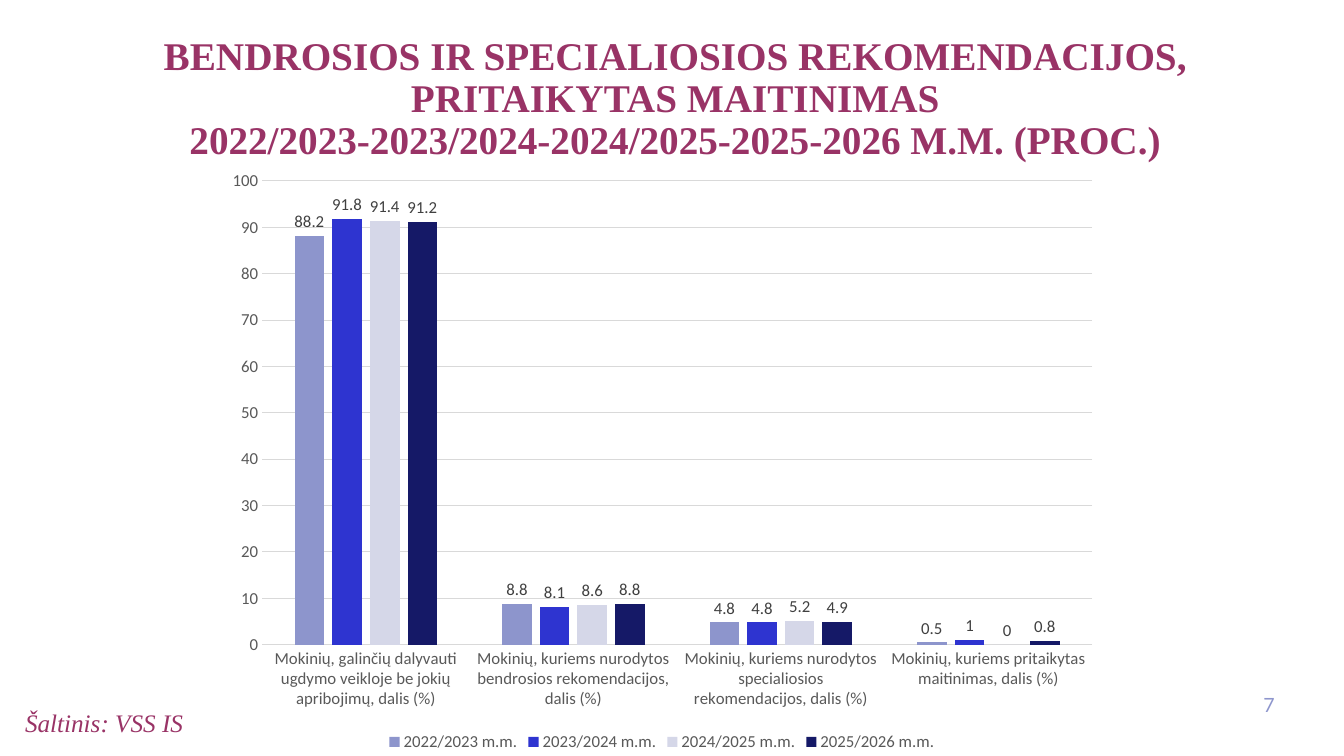
from dataclasses import dataclass

from lxml import etree
from pptx import Presentation
from pptx.chart.data import CategoryChartData
from pptx.dml.color import RGBColor
from pptx.enum import chart as charts, text
from pptx.oxml import ns
from pptx.util import Inches, Pt


@dataclass(frozen=True)
class Theme:
    serif: str = "Times New Roman"
    number_font: str = "Lato"
    chart_font: str = "Calibri"
    accent: str = "993366"
    number: str = "8E96CD"
    axis_text: str = "595959"
    label_text: str = "404040"
    grid: str = "D9D9D9"
    years: tuple = ("8D95CC", "2E34D0", "D5D7E8", "151967")
    title_size: int = 28
    source_size: int = 18
    number_size: int = 14
    chart_size: int = 12


THEME = Theme()

TITLE = (
    "BENDROSIOS IR SPECIALIOSIOS REKOMENDACIJOS,\v"
    "PRITAIKYTAS MAITINIMAS\v"
    "2022/2023-2023/2024-2024/2025-2025-2026 M.M. (PROC.)"
)
CATEGORIES = (
    "Mokinių, galinčių dalyvauti ugdymo veikloje be jokių apribojimų, dalis (%)",
    "Mokinių, kuriems nurodytos bendrosios rekomendacijos, dalis (%)",
    "Mokinių, kuriems nurodytos specialiosios rekomendacijos, dalis (%)",
    "Mokinių, kuriems pritaikytas maitinimas, dalis (%)",
)
SHARES = {
    "2022/2023 m.m.": (88.2, 8.8, 4.8, 0.5),
    "2023/2024 m.m.": (91.8, 8.1, 4.8, 1),
    "2024/2025 m.m.": (91.4, 8.6, 5.2, 0),
    "2025/2026 m.m.": (91.2, 8.8, 4.9, 0.8),
}
PLOT_AREA = {"x": 0.054, "y": 0.038, "w": 0.926, "h": 0.776}


def set_font(font, name, size, color, bold=False, italic=False):
    font.name = name
    font.size = Pt(size)
    font.bold = bold
    font.italic = italic
    font.color.rgb = RGBColor.from_string(color)


def set_line(line, color):
    line.color.rgb = RGBColor.from_string(color)
    line.width = Pt(0.75)


def place(shape, left, top, width, height):
    shape.left, shape.top = Inches(left), Inches(top)
    shape.width, shape.height = Inches(width), Inches(height)


def add_title(slide):
    title = slide.shapes.title
    place(title, 0.15, 0.31, 13.09, 1.56)
    frame = title.text_frame
    frame.text = TITLE
    frame.word_wrap = True
    frame.auto_size = text.MSO_AUTO_SIZE.NONE
    frame.vertical_anchor = text.MSO_ANCHOR.TOP
    paragraph = frame.paragraphs[0]
    paragraph.alignment = text.PP_ALIGN.CENTER
    paragraph.line_spacing = 0.9
    paragraph.space_before = Pt(0)
    set_font(paragraph.font, THEME.serif, THEME.title_size, THEME.accent, bold=True)


def add_text(slide, box, wording, alignment, *font, **style):
    shape = slide.shapes.add_textbox(*map(Inches, box))
    frame = shape.text_frame
    frame.text = wording
    frame.word_wrap = True
    frame.vertical_anchor = text.MSO_ANCHOR.MIDDLE
    paragraph = frame.paragraphs[0]
    paragraph.alignment = alignment
    set_font(paragraph.font, *font, **style)


def fix_plot_area(chart):
    """Pin the inner plot area to fractions of the chart frame."""
    plot_area = chart._chartSpace.find(".//" + ns.qn("c:plotArea"))
    for layout in plot_area.findall(ns.qn("c:layout")):
        plot_area.remove(layout)
    layout = etree.Element(ns.qn("c:layout"))
    manual = etree.SubElement(layout, ns.qn("c:manualLayout"))
    settings = {"layoutTarget": "inner", "xMode": "edge", "yMode": "edge", **PLOT_AREA}
    for tag, value in settings.items():
        etree.SubElement(manual, ns.qn(f"c:{tag}")).set("val", str(value))
    plot_area.insert(0, layout)


def format_axes(chart):
    for axis in (chart.category_axis, chart.value_axis):
        axis.major_tick_mark = axis.minor_tick_mark = charts.XL_TICK_MARK.NONE
        set_font(axis.tick_labels.font, THEME.chart_font, THEME.chart_size, THEME.axis_text)
    set_line(chart.category_axis.format.line, THEME.grid)
    values = chart.value_axis
    values.minimum_scale, values.maximum_scale, values.major_unit = 0, 100, 10
    values.format.line.fill.background()
    values.has_major_gridlines = True
    set_line(values.major_gridlines.format.line, THEME.grid)


def format_series(series, color):
    series.format.fill.solid()
    series.format.fill.fore_color.rgb = RGBColor.from_string(color)
    series.invert_if_negative = False
    labels = series.data_labels
    labels.show_value = True
    labels.position = charts.XL_LABEL_POSITION.OUTSIDE_END
    set_font(labels.font, THEME.chart_font, THEME.chart_size, THEME.label_text)


def add_share_chart(slide):
    data = CategoryChartData()
    data.categories = CATEGORIES
    for year, shares in SHARES.items():
        data.add_series(year, shares)
    box = map(Inches, (2.12, 1.57, 8.89, 5.93))
    frame = slide.shapes.add_chart(charts.XL_CHART_TYPE.COLUMN_CLUSTERED, *box, data)
    chart = frame.chart
    chart.has_title = False
    set_font(chart.font, THEME.chart_font, THEME.chart_size, THEME.axis_text)
    chart.has_legend = True
    chart.legend.position = charts.XL_LEGEND_POSITION.BOTTOM
    chart.legend.include_in_layout = False
    set_font(chart.legend.font, THEME.chart_font, THEME.chart_size, THEME.axis_text)
    plot = chart.plots[0]
    plot.vary_by_categories = False
    plot.gap_width = 219
    plot.overlap = -27
    for series, color in zip(plot.series, THEME.years):
        format_series(series, color)
    format_axes(chart)
    fix_plot_area(chart)


def main():
    presentation = Presentation()
    presentation.slide_width = Inches(13.33)
    presentation.slide_height = Inches(7.5)
    slide = presentation.slides.add_slide(presentation.slide_layouts[5])
    add_title(slide)
    add_text(slide, (0.15, 6.98, 6.3, 0.38), "Šaltinis: VSS IS", text.PP_ALIGN.LEFT,
             THEME.serif, THEME.source_size, THEME.accent, italic=True)
    add_text(slide, (12.22, 6.79, 0.52, 0.4), "7", text.PP_ALIGN.RIGHT,
             THEME.number_font, THEME.number_size, THEME.number)
    add_share_chart(slide)
    presentation.save("out.pptx")


if __name__ == "__main__":
    main()
